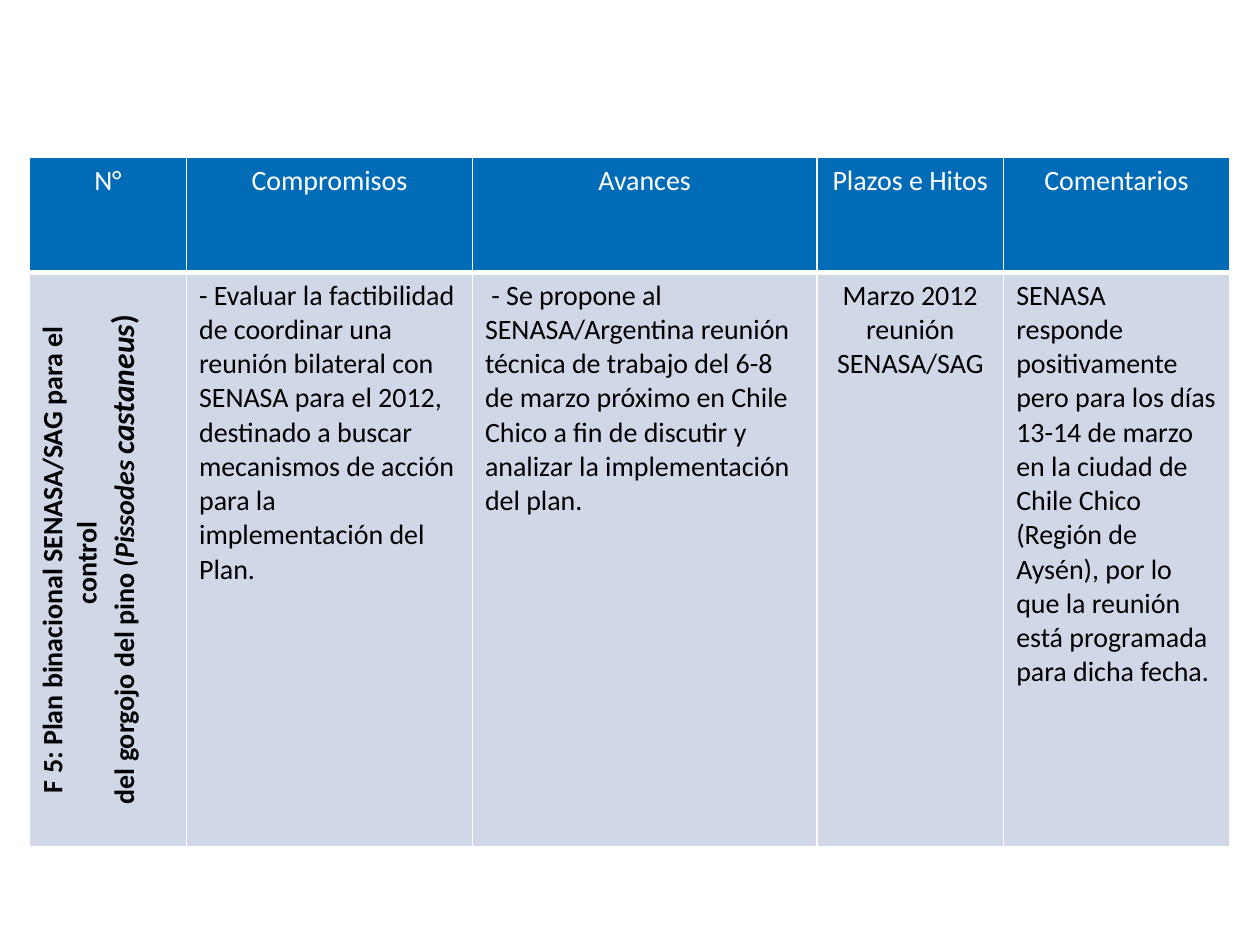
from dataclasses import dataclass

from lxml.etree import SubElement
from pptx import Presentation
from pptx.dml.color import RGBColor as RGB
from pptx.enum.text import PP_ALIGN as Align
from pptx.oxml.ns import qn
from pptx.util import Pt


@dataclass(frozen=True)
class Theme:
    font: str = "Calibri"
    size: int = 16
    species_size: int = 18
    header_fill: str = "006CB7"
    body_fill: str = "D0D8E8"
    border: str = "FFFFFF"
    header_text: str = "FFFFFF"
    body_text: str = "000000"


theme = Theme()


def set_borders(cell, bottom):
    """Draw 1 pt borders, with the bottom one in its own width."""
    for side, width in (("L", 1), ("R", 1), ("T", 1), ("B", bottom)):
        line = SubElement(cell._tc.get_or_add_tcPr(), qn(f"a:ln{side}"), w=str(Pt(width)))
        fill = SubElement(line, qn("a:solidFill"))
        SubElement(fill, qn("a:srgbClr"), val=theme.border)


def style_text(paragraph, color, align):
    paragraph.alignment = align
    font = paragraph.font
    font.name, font.size, font.bold = theme.font, Pt(theme.size), False
    font.color.rgb = RGB.from_string(color)


# Heading, column width, body text, body alignment
columns = [
    ("N°", 89.8, "F 5: Plan binacional SENASA/SAG para el control \n", Align.CENTER),
    ("Compromisos", 163.4,
     "- Evaluar la factibilidad de coordinar una reunión bilateral con SENASA para el "
     "2012, destinado a buscar mecanismos de acción para la implementación del Plan.",
     Align.LEFT),
    ("Avances", 196.8,
     " - Se propone al SENASA/Argentina reunión técnica de trabajo del 6-8 de marzo "
     "próximo en Chile Chico a fin de discutir y analizar la implementación del plan.",
     Align.LEFT),
    ("Plazos e Hitos", 106.8, "Marzo 2012 reunión SENASA/SAG", Align.CENTER),
    ("Comentarios", 129,
     "SENASA responde positivamente pero para los días 13-14 de marzo en la ciudad de "
     "Chile Chico (Región de Aysén), por lo que la reunión está programada para dicha "
     "fecha.", Align.LEFT),
]
row_heights = (65.6, 328)

prs = Presentation()
prs.slide_width, prs.slide_height = Pt(720), Pt(540)
slide = prs.slides.add_slide(prs.slide_layouts[6])

total_width = sum(column[1] for column in columns)
commitments = slide.shapes.add_table(
    2, len(columns), Pt(16.8), Pt(90), Pt(total_width), Pt(sum(row_heights))).table
for row, height in zip(commitments.rows, row_heights):
    row.height = Pt(height)

for i, (heading, width, body, body_align) in enumerate(columns):
    commitments.columns[i].width = Pt(width)
    cells = (
        (heading, Align.CENTER, theme.header_fill, theme.header_text, 3),
        (body, body_align, theme.body_fill, theme.body_text, 1),
    )
    for r, (text, align, fill, color, bottom) in enumerate(cells):
        cell = commitments.cell(r, i)
        set_borders(cell, bottom)
        cell.fill.solid()
        cell.fill.fore_color.rgb = RGB.from_string(fill)
        cell.text = text
        for paragraph in cell.text_frame.paragraphs:
            style_text(paragraph, color, align)

# The plan's name reads upwards, with the species in italics
plan = commitments.cell(1, 0)
plan._tc.get_or_add_tcPr().set("vert", "vert270")
for paragraph in plan.text_frame.paragraphs:
    paragraph.font.bold = True
species_line = plan.text_frame.paragraphs[1]
for text, italic, size in (
    ("del gorgojo del pino ", False, theme.size),
    ("(Pissodes ", True, theme.size),
    ("castaneus", True, theme.species_size),
    (")", False, theme.species_size),
):
    run = species_line.add_run()
    run.text = text
    run.font.italic = italic
    run.font.size = Pt(size)

prs.save("out.pptx")
